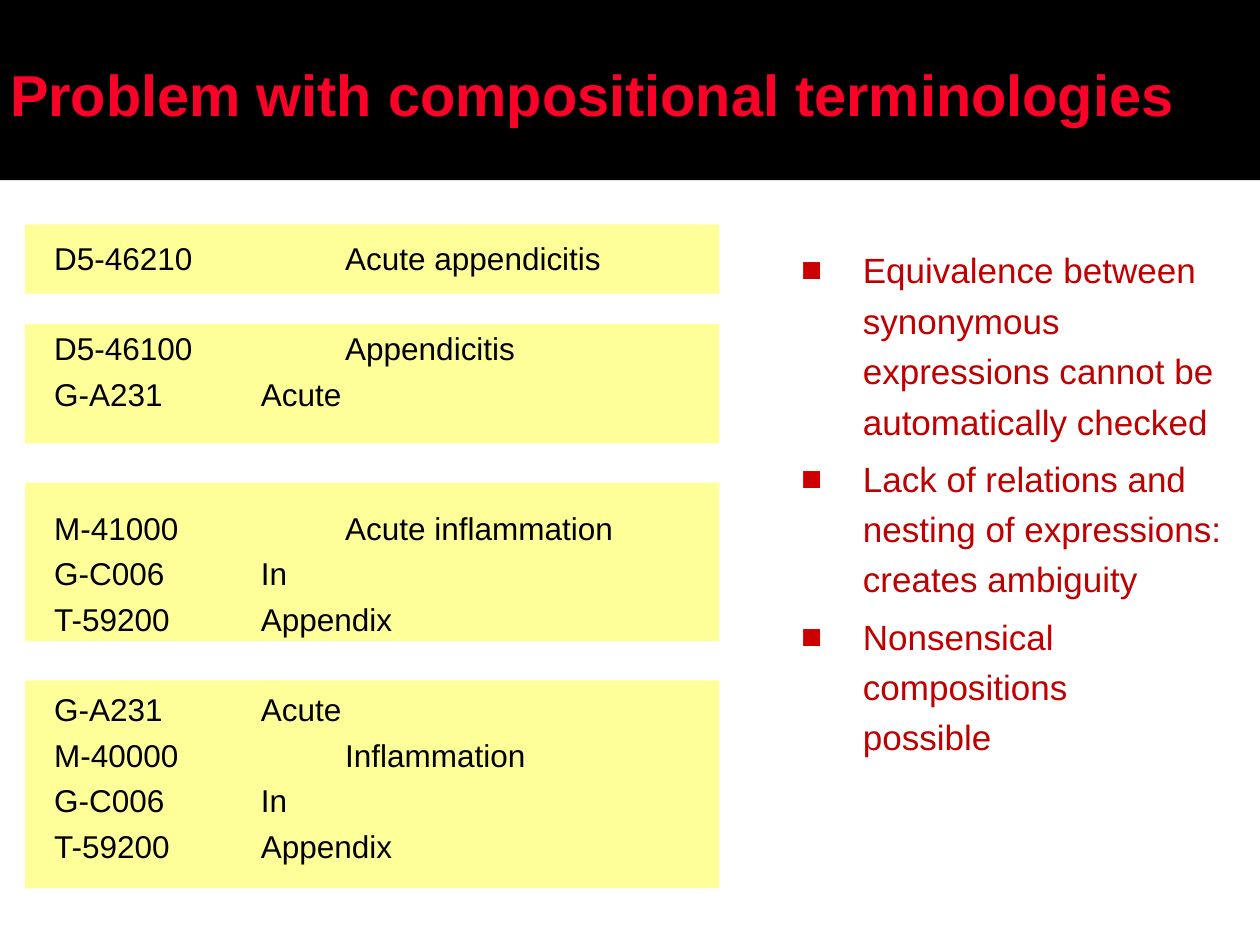
from pptx import Presentation
from pptx import util as u
from pptx.dml.color import RGBColor
from pptx.enum import shapes, text
from pptx.oxml.ns import qn
from lxml import etree

BLACK = RGBColor(0x00, 0x00, 0x00)
TITLE_RED = RGBColor(0xFC, 0x01, 0x28)
POINT_RED = RGBColor(0xC0, 0x00, 0x00)
BULLET_RED = RGBColor(0xCC, 0x00, 0x00)
PALE_YELLOW = RGBColor(0xFF, 0xFF, 0x99)

# Top and height of the panel behind each expression
PANELS = [(2.57, 0.95), (3.83, 1.26), (5.4, 1.65), (1.78, 0.55)]
# Extra lines left above each expression, then its code and term rows
EXPRESSIONS = [
    (0, [("D5-46210", "Acute appendicitis")]),
    (1, [("D5-46100", "Appendicitis"), ("G-A231", "Acute")]),
    (2, [("M-41000", "Acute inflammation"), ("G-C006", "In"),
         ("T-59200", "Appendix")]),
    (1, [("G-A231", "Acute"), ("M-40000", "Inflammation"),
         ("G-C006", "In"), ("T-59200", "Appendix")]),
]
PROBLEMS = [
    "Equivalence between synonymous expressions cannot be automatically checked",
    "Lack of relations and nesting of expressions: creates ambiguity",
    "Nonsensical compositions \vpossible",
]


class Deck:
    FONT = "Arial"
    ROW_GAP = 4.5
    ROW_PITCH = 25.2
    TAB_STOPS = (0.97, 1.64, 2.31)

    def __init__(self):
        self.prs = Presentation()
        self.prs.slide_width = u.Inches(10)
        self.prs.slide_height = u.Inches(7.5)
        self.slide = self.prs.slides.add_slide(self.prs.slide_layouts[5])

    def style(self, paragraph, size, color, bold=False):
        font = paragraph.font
        font.name, font.size, font.bold = self.FONT, u.Pt(size), bold
        font.color.rgb = color

    def set_margins(self, frame, side, edge):
        frame.margin_left = frame.margin_right = u.Inches(side)
        frame.margin_top = frame.margin_bottom = u.Inches(edge)

    def title(self, wording):
        banner = self.slide.shapes.title
        banner.left = banner.top = u.Inches(0)
        banner.width, banner.height = u.Inches(10), u.Inches(1.43)
        banner.fill.solid()
        banner.fill.fore_color.rgb = BLACK
        frame = banner.text_frame
        frame.text = wording
        frame.vertical_anchor = text.MSO_ANCHOR.MIDDLE
        self.set_margins(frame, 0.08, 0.04)
        heading = frame.paragraphs[0]
        heading.alignment = text.PP_ALIGN.LEFT
        heading.line_spacing = 1.1
        self.style(heading, 33, TITLE_RED, bold=True)

    def panel(self, top, height):
        panel = self.slide.shapes.add_shape(
            shapes.MSO_SHAPE.RECTANGLE, u.Inches(0.2), u.Inches(top),
            u.Inches(5.51), u.Inches(height))
        panel.shadow.inherit = False
        panel.fill.solid()
        panel.fill.fore_color.rgb = PALE_YELLOW
        panel.line.fill.background()

    def text_box(self, left, top, width, height, lines):
        box = self.slide.shapes.add_textbox(
            *(u.Inches(length) for length in (left, top, width, height)))
        frame = box.text_frame
        frame.word_wrap = True
        frame.text = "\n".join(lines)
        return frame

    def code_list(self, expressions):
        rows = [(skipped if i == 0 else 0, f"{code}\t\t{term}")
                for skipped, pairs in expressions
                for i, (code, term) in enumerate(pairs)]
        frame = self.text_box(0.35, 1.86, 5.35, 4.5, [row for _, row in rows])
        self.set_margins(frame, 0.08, 0.04)
        for paragraph, (skipped, _) in zip(frame.paragraphs, rows):
            paragraph.space_before = u.Pt(self.ROW_GAP + skipped * self.ROW_PITCH)
            self.style(paragraph, 18, BLACK)
            self.add_tab_stops(paragraph)

    def add_tab_stops(self, paragraph):
        stops = etree.Element(qn("a:tabLst"))
        for position in self.TAB_STOPS:
            etree.SubElement(stops, qn("a:tab"),
                             pos=str(u.Inches(position)), algn="l")
        paragraph.font  # the tab list must stand before the font properties
        properties = paragraph._p.get_or_add_pPr()
        properties.find(qn("a:defRPr")).addprevious(stops)

    def bullet_list(self, points):
        frame = self.text_box(6.26, 1.86, 3.56, 5.12, points)
        for paragraph in frame.paragraphs:
            paragraph.line_spacing = 1.2
            paragraph.space_before = u.Pt(3.8)
            self.style(paragraph, 20, POINT_RED)
            self.add_bullet(paragraph)

    def add_bullet(self, paragraph):
        properties = paragraph._p.get_or_add_pPr()
        properties.set("marL", str(u.Inches(0.49)))
        properties.set("indent", str(-u.Inches(0.49)))
        font_properties = properties.find(qn("a:defRPr"))
        color = etree.Element(qn("a:buClr"))
        etree.SubElement(color, qn("a:srgbClr"), val=str(BULLET_RED))
        font_properties.addprevious(color)
        font_properties.addprevious(
            etree.Element(qn("a:buFont"), typeface=self.FONT))
        font_properties.addprevious(etree.Element(qn("a:buChar"), char="■"))


def main():
    deck = Deck()
    deck.title("Problem with compositional terminologies")
    for top, height in PANELS:
        deck.panel(top, height)
    deck.code_list(EXPRESSIONS)
    deck.bullet_list(PROBLEMS)
    deck.prs.save("out.pptx")


if __name__ == "__main__":
    main()
